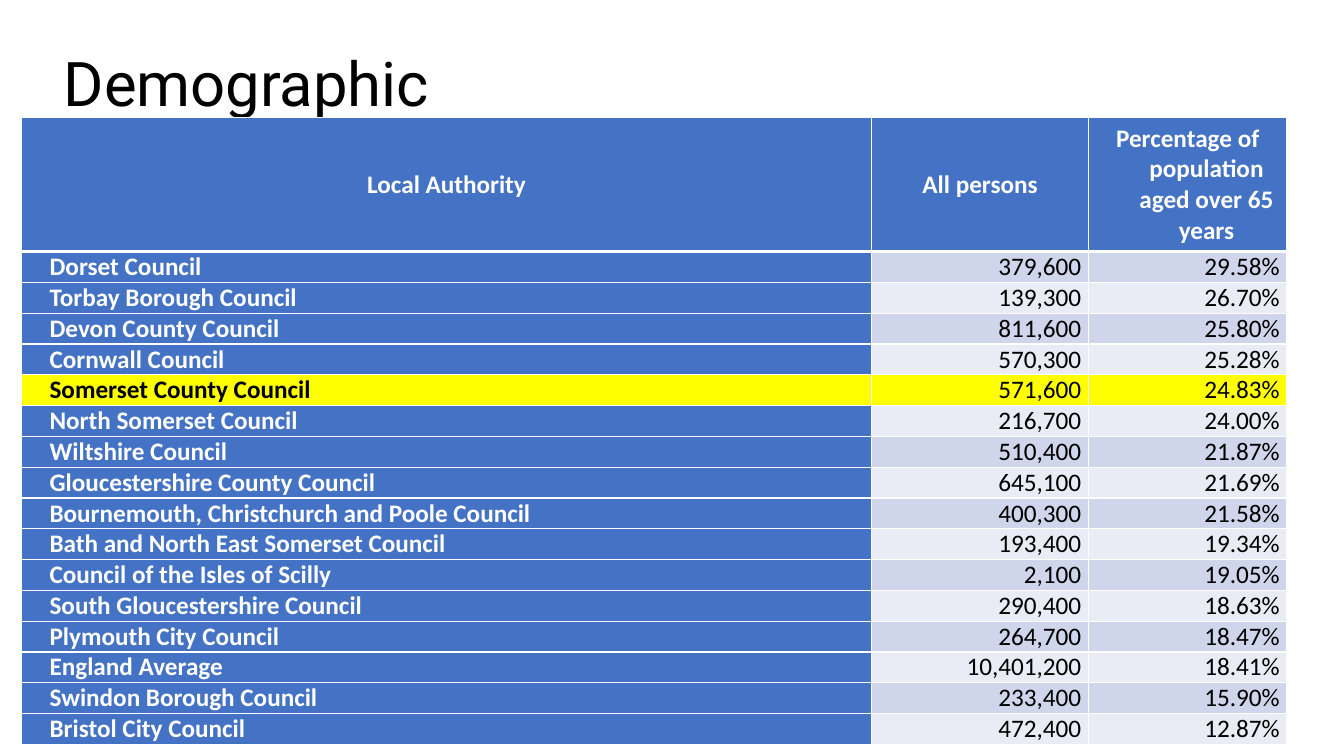
from dataclasses import dataclass

from lxml import etree
from pptx import Presentation
from pptx import util as u
from pptx.dml.color import RGBColor
from pptx.enum import text
from pptx.oxml.ns import qn


@dataclass(frozen=True)
class Theme:
    title_font: str = "Roboto"
    table_font: str = "Calibri"
    title_size: int = 44
    table_size: int = 18
    black: str = "000000"
    white: str = "FFFFFF"
    blue: str = "4472C4"
    yellow: str = "FFFF00"
    bands: tuple = ("CFD5EA", "E9EBF5")
    thin: int = 1
    thick: int = 3


HEADINGS = ("Local Authority", "All persons",
            "Percentage of population aged over 65 years")
HIGHLIGHTED = "Somerset County Council"
AUTHORITIES = [
    ("Dorset Council", "379,600", "29.58%"),
    ("Torbay Borough Council", "139,300", "26.70%"),
    ("Devon County Council", "811,600", "25.80%"),
    ("Cornwall Council", "570,300", "25.28%"),
    (HIGHLIGHTED, "571,600", "24.83%"),
    ("North Somerset Council", "216,700", "24.00%"),
    ("Wiltshire Council", "510,400", "21.87%"),
    ("Gloucestershire County Council", "645,100", "21.69%"),
    ("Bournemouth, Christchurch and Poole Council", "400,300", "21.58%"),
    ("Bath and North East Somerset Council", "193,400", "19.34%"),
    ("Council of the Isles of Scilly", "2,100", "19.05%"),
    ("South Gloucestershire Council", "290,400", "18.63%"),
    ("Plymouth City Council", "264,700", "18.47%"),
    ("England Average", "10,401,200", "18.41%"),
    ("Swindon Borough Council", "233,400", "15.90%"),
    ("Bristol City Council", "472,400", "12.87%"),
]
COLUMN_WIDTHS = (21.43, 5.46, 5.0)
HEADER_HEIGHT, ROW_HEIGHT = 3.38, 0.76


class SlideBuilder:
    def __init__(self, page, theme):
        self.page = page
        self.theme = theme

    def add_span(self, para, words, font, size, color, bold=False):
        span = para.add_run()
        span.text = words
        span.font.name = font
        span.font.size = u.Pt(size)
        span.font.bold = bold
        span.font.color.rgb = RGBColor.from_string(color)

    def add_title(self, words, left, top, width, height):
        box = self.page.shapes.title
        box.left, box.top = u.Cm(left), u.Cm(top)
        box.width, box.height = u.Cm(width), u.Cm(height)
        frame = box.text_frame
        frame.word_wrap = True
        frame.auto_size = text.MSO_AUTO_SIZE.NONE
        frame.vertical_anchor = text.MSO_ANCHOR.BOTTOM
        para = frame.paragraphs[0]
        para.alignment = text.PP_ALIGN.LEFT
        para.line_spacing = 0.9
        self.add_span(para, words, self.theme.title_font,
                      self.theme.title_size, self.theme.black)

    def add_borders(self, cell, top, bottom):
        """Draw white cell edges; top and bottom are widths in points."""
        thin = self.theme.thin
        properties = cell._tc.get_or_add_tcPr()
        for side, width in zip("LRTB", (thin, thin, top, bottom)):
            line = etree.SubElement(properties, qn(f"a:ln{side}"), w=str(u.Pt(width)))
            fill = etree.SubElement(line, qn("a:solidFill"))
            etree.SubElement(fill, qn("a:srgbClr"), val=self.theme.white)

    def cell_style(self, row, column, highlighted):
        """Return fill, text colour, alignment and (margin, indent) in cm."""
        theme = self.theme
        hanging = (0.95, -0.95)
        if row == 0:
            return (theme.blue, theme.white, text.PP_ALIGN.CENTER,
                    hanging if column else (0, 0))
        fill, ink = theme.bands[(row - 1) % 2], theme.black
        if column == 0:
            fill, ink = theme.blue, theme.white
        if highlighted:
            fill, ink = theme.yellow, theme.black
        if column == 0:
            return fill, ink, text.PP_ALIGN.JUSTIFY, (0.53, 0)
        return fill, ink, text.PP_ALIGN.RIGHT, hanging

    def fill_cell(self, cell, words, row, column, highlighted):
        theme = self.theme
        fill, ink, alignment, (margin, indent) = self.cell_style(row, column, highlighted)
        cell.margin_left = cell.margin_right = u.Cm(0.18)
        cell.margin_top = cell.margin_bottom = 0
        cell.vertical_anchor = text.MSO_ANCHOR.BOTTOM if row else text.MSO_ANCHOR.MIDDLE
        self.add_borders(cell, top=theme.thick if row == 1 else theme.thin,
                         bottom=theme.thin if row else theme.thick)
        cell.fill.solid()
        cell.fill.fore_color.rgb = RGBColor.from_string(fill)
        para = cell.text_frame.paragraphs[0]
        para.alignment = alignment
        properties = para._p.get_or_add_pPr()
        properties.set("marL", str(u.Cm(margin)))
        properties.set("indent", str(u.Cm(indent)))
        self.add_span(para, words, theme.table_font, theme.table_size, ink,
                      bold=row == 0 or column == 0)

    def add_table(self, records, left, top):
        height = HEADER_HEIGHT + ROW_HEIGHT * (len(records) - 1)
        table = self.page.shapes.add_table(
            len(records), len(COLUMN_WIDTHS), u.Cm(left), u.Cm(top),
            u.Cm(sum(COLUMN_WIDTHS)), u.Cm(height)).table
        table.first_col = True
        for column, width in zip(table.columns, COLUMN_WIDTHS):
            column.width = u.Cm(width)
        for row, record in enumerate(records):
            table.rows[row].height = u.Cm(ROW_HEIGHT if row else HEADER_HEIGHT)
            for column, words in enumerate(record):
                self.fill_cell(table.cell(row, column), words, row, column,
                               record[0] == HIGHLIGHTED)


def main():
    deck = Presentation()
    deck.slide_width, deck.slide_height = u.Cm(33.87), u.Cm(19.05)
    title_only = deck.slide_layouts[5]
    builder = SlideBuilder(deck.slides.add_slide(title_only), Theme())
    builder.add_title("Demographic", 1.35, 0.81, 23.16, 2.34)
    builder.add_table([HEADINGS, *AUTHORITIES], 0.54, 2.96)
    deck.save("out.pptx")


if __name__ == "__main__":
    main()
